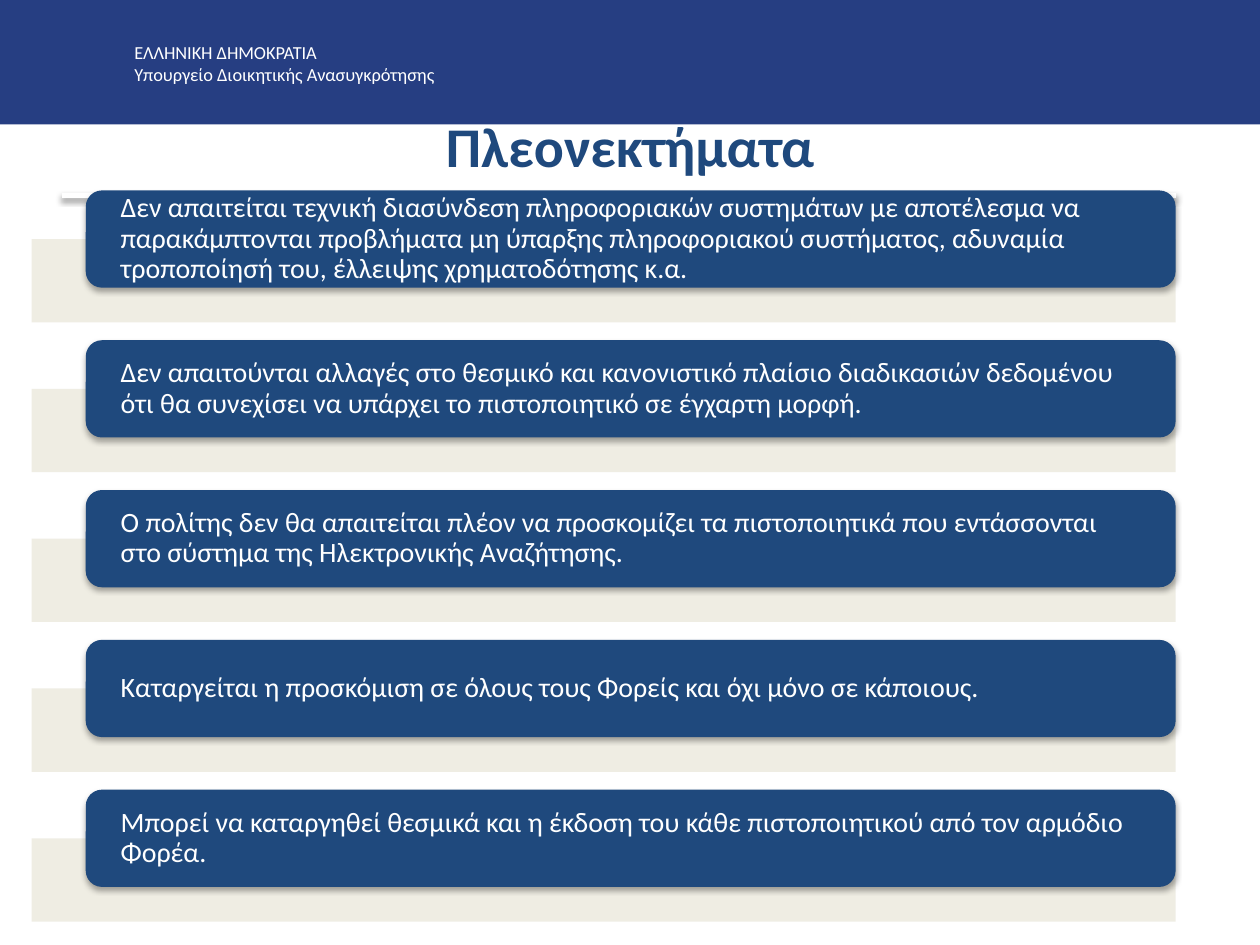
from lxml import etree
from pptx import Presentation
from pptx import util as u
from pptx.dml.color import RGBColor
from pptx.enum import shapes, text
from pptx.oxml import ns

NAVY = RGBColor(0x26, 0x3E, 0x82)
BLUE = RGBColor(0x1F, 0x49, 0x7D)
CREAM = RGBColor(0xEE, 0xEC, 0xE1)
WHITE = RGBColor(0xFF, 0xFF, 0xFF)

HEADER = ["ΕΛΛΗΝΙΚΗ ΔΗΜΟΚΡΑΤΙΑ", "Υπουργείο Διοικητικής Ανασυγκρότησης"]
TITLE = "Πλεονεκτήματα"
ADVANTAGES = [
    "Δεν απαιτείται τεχνική διασύνδεση πληροφοριακών συστημάτων με αποτέλεσμα να "
    "παρακάμπτονται προβλήματα μη ύπαρξης πληροφοριακού συστήματος, αδυναμία "
    "τροποποίησή του, έλλειψης χρηματοδότησης κ.α.",
    "Δεν απαιτούνται αλλαγές στο θεσμικό και κανονιστικό πλαίσιο διαδικασιών δεδομένου "
    "ότι θα συνεχίσει να υπάρχει το πιστοποιητικό σε έγχαρτη μορφή.",
    "Ο πολίτης δεν θα απαιτείται πλέον να προσκομίζει τα πιστοποιητικά που εντάσσονται στο "
    "σύστημα της Ηλεκτρονικής Αναζήτησης.",
    "Καταργείται η προσκόμιση σε όλους τους Φορείς και όχι μόνο σε κάποιους.",
    "Μπορεί να καταργηθεί θεσμικά και η έκδοση του κάθε πιστοποιητικού από τον αρμόδιο Φορέα.",
]
FIRST_TOP, PITCH = 3.84, 3.02


class Deck:
    font = "Calibri"

    def __init__(self):
        self.prs = Presentation()
        self.prs.slide_width, self.prs.slide_height = u.Cm(25.4), u.Cm(19.05)
        self.s = self.prs.slides.add_slide(self.prs.slide_layouts[5])

    def set_text(self, tf, lines, size, color, bold=False, align=text.PP_ALIGN.LEFT):
        tf.word_wrap = True
        tf.text = "\n".join(lines)
        for p in tf.paragraphs:
            p.alignment = align
            for r in p.runs:
                r.font.name, r.font.size, r.font.bold = self.font, u.Pt(size), bold
                r.font.color.rgb = color

    def shadow(self, sp):
        spPr = sp._element.spPr
        for old in spPr.findall(ns.qn("a:effectLst")):
            spPr.remove(old)
        effects = etree.SubElement(spPr, ns.qn("a:effectLst"))
        outer = etree.SubElement(effects, ns.qn("a:outerShdw"), blurRad="40000",
                                 dist="23000", dir="5400000", rotWithShape="0")
        clr = etree.SubElement(outer, ns.qn("a:srgbClr"), val="000000")
        etree.SubElement(clr, ns.qn("a:alpha"), val="35000")

    def title(self, line, *box):
        sp = self.s.shapes.title
        sp.left, sp.top, sp.width, sp.height = map(u.Cm, box)
        tf = sp.text_frame
        tf.auto_size = text.MSO_AUTO_SIZE.NONE
        tf.vertical_anchor = text.MSO_ANCHOR.MIDDLE
        self.set_text(tf, [line], 32, BLUE, True, text.PP_ALIGN.CENTER)

    def label(self, lines, *box):
        sp = self.s.shapes.add_textbox(*map(u.Cm, box))
        self.set_text(sp.text_frame, lines, 10.5, WHITE)

    def block(self, kind, color, *box, opacity=None):
        sp = self.s.shapes.add_shape(kind, *map(u.Cm, box))
        sp.shadow.inherit = False
        sp.fill.solid()
        sp.fill.fore_color.rgb = color
        sp.line.fill.background()
        if opacity:
            clr = sp._element.spPr.find(ns.qn("a:solidFill"))[0]
            etree.SubElement(clr, ns.qn("a:alpha"), val=str(opacity * 1000))
        return sp

    def card(self, line, top):
        self.block(shapes.MSO_SHAPE.RECTANGLE, CREAM, 0.64, top + 0.98, 23.06, 1.68,
                   opacity=90)
        sp = self.block(shapes.MSO_SHAPE.ROUNDED_RECTANGLE, BLUE, 1.73, top, 21.97, 1.96)
        self.shadow(sp)
        tf = sp.text_frame
        tf.margin_left = tf.margin_right = u.Cm(0.61)
        tf.margin_top = tf.margin_bottom = 0
        tf.vertical_anchor = text.MSO_ANCHOR.MIDDLE
        self.set_text(tf, [line], 16, WHITE)
        tf.paragraphs[0].line_spacing = 0.9

    def rule(self, x1, x2, y):
        ln = self.s.shapes.add_connector(shapes.MSO_CONNECTOR.STRAIGHT,
                                         *map(u.Cm, (x1, y, x2, y)))
        ln.line.color.rgb = WHITE
        ln.line.width = u.Pt(3)
        self.shadow(ln)


def main():
    deck = Deck()
    # Header band
    deck.block(shapes.MSO_SHAPE.RECTANGLE, NAVY, 0, 0, 25.4, 2.51)
    deck.label(HEADER, 2.46, 0.71, 10.24, 2.13)
    # Title and rule
    deck.title(TITLE, 0.64, 2.11, 24.13, 1.63)
    deck.rule(1.24, 23.7, 3.94)
    # Advantages
    for i, line in enumerate(ADVANTAGES):
        deck.card(line, FIRST_TOP + i * PITCH)
    deck.prs.save("out.pptx")


if __name__ == "__main__":
    main()
